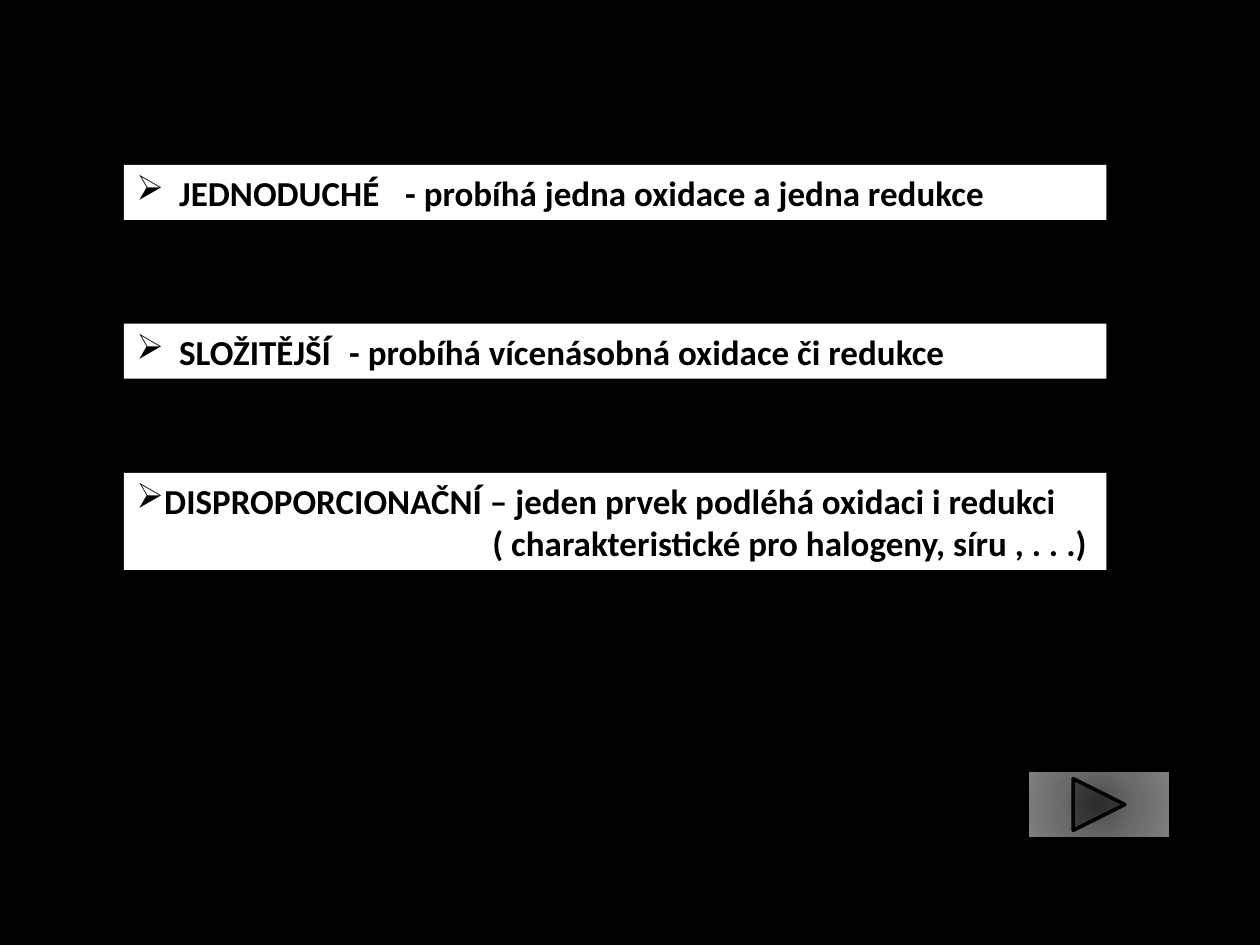
from lxml import etree
from pptx import Presentation
from pptx.dml.color import RGBColor
from pptx.enum.shapes import MSO_SHAPE
from pptx.enum.text import MSO_ANCHOR, PP_ALIGN
from pptx.oxml.ns import qn
from pptx.util import Pt

RECTANGLE = MSO_SHAPE.RECTANGLE
NEXT_BUTTON = MSO_SHAPE.ACTION_BUTTON_FORWARD_OR_NEXT
MIDDLE = MSO_ANCHOR.MIDDLE
LEFT = PP_ALIGN.LEFT

COLORS = {
    "background": "000000",
    "panel": "FFFFFF",
    "text": "000000",
    "outline": "000000",
    "button_center": "4C4C4C",
    "button_middle": "6B6B6B",
    "button_edge": "808080",
}
BLANK_LAYOUT = 6
PANEL_LEFT, PANEL_WIDTH = 70.8, 561.4
TERM_TAB = 24.5

# Each panel: top, height, lines; each line: text, bullet, left margin, tab stops
REACTION_TYPES = [
    (94.2, 31.5, [("\tJEDNODUCHÉ\t- probíhá jedna oxidace a jedna redukce",
                   "➢", 0, [TERM_TAB, 153.6])]),
    (184.9, 31.5, [("\tSLOŽITĚJŠÍ\t- probíhá vícenásobná oxidace či redukce",
                    "➢", 0, [TERM_TAB, 121.6])]),
    (270.2, 55.5, [("DISPROPORCIONAČNÍ – jeden prvek podléhá oxidaci i redukci",
                    "➢", 0, []),
                   ("( charakteristické pro halogeny, síru , . . .)",
                    None, 203.5, [])]),
]


def rgb(name):
    return RGBColor.from_string(COLORS[name])


def format_line(paragraph, bullet, margin, tabs):
    """Set the bullet, left margin, tab stops and font of one line."""
    properties = paragraph._p.get_or_add_pPr()
    properties.set("marL", str(Pt(margin)))
    properties.set("indent", "0")
    if bullet:
        etree.SubElement(properties, qn("a:buChar"), char=bullet)
    else:
        etree.SubElement(properties, qn("a:buNone"))
    if tabs:
        tab_list = etree.SubElement(properties, qn("a:tabLst"))
        for position in tabs:
            etree.SubElement(tab_list, qn("a:tab"), pos=str(Pt(position)), algn="l")
    paragraph.alignment = LEFT
    for run in paragraph.runs:
        run.font.name = "Calibri"
        run.font.size = Pt(20)
        run.font.bold = True
        run.font.color.rgb = rgb("text")


def add_reaction_panel(slide, left, top, width, height, lines):
    panel = slide.shapes.add_shape(RECTANGLE, Pt(left), Pt(top), Pt(width), Pt(height))
    panel.shadow.inherit = False
    panel.fill.solid()
    panel.fill.fore_color.rgb = rgb("panel")
    panel.line.fill.background()
    frame = panel.text_frame
    frame.word_wrap = True
    frame.vertical_anchor = MIDDLE
    frame.text = "\n".join(text for text, *_ in lines)
    for paragraph, (_, bullet, margin, tabs) in zip(frame.paragraphs, lines):
        format_line(paragraph, bullet, margin, tabs)


def add_next_button(slide, left, top, width, height):
    button = slide.shapes.add_shape(NEXT_BUTTON, Pt(left), Pt(top), Pt(width), Pt(height))
    button.shadow.inherit = False
    button.line.color.rgb = rgb("outline")
    button.line.width = Pt(2)
    button.fill.solid()
    solid = button._element.spPr.find(qn("a:solidFill"))
    gradient = etree.Element(qn("a:gradFill"), rotWithShape="1")
    stops = etree.SubElement(gradient, qn("a:gsLst"))
    for percent, name in ((0, "button_center"), (50, "button_middle"), (100, "button_edge")):
        stop = etree.SubElement(stops, qn("a:gs"), pos=str(percent * 1000))
        etree.SubElement(stop, qn("a:srgbClr"), val=COLORS[name])
    radial = etree.SubElement(gradient, qn("a:path"), path="circle")
    etree.SubElement(radial, qn("a:fillToRect"), {side: "50000" for side in "ltrb"})
    solid.getparent().replace(solid, gradient)


def main():
    presentation = Presentation()
    presentation.slide_width, presentation.slide_height = Pt(720), Pt(540)
    slide = presentation.slides.add_slide(presentation.slide_layouts[BLANK_LAYOUT])
    slide.background.fill.solid()
    slide.background.fill.fore_color.rgb = rgb("background")
    for top, height, lines in REACTION_TYPES:
        add_reaction_panel(slide, PANEL_LEFT, top, PANEL_WIDTH, height, lines)
    add_next_button(slide, 587, 440, 82, 39.5)
    presentation.save("out.pptx")


if __name__ == "__main__":
    main()
